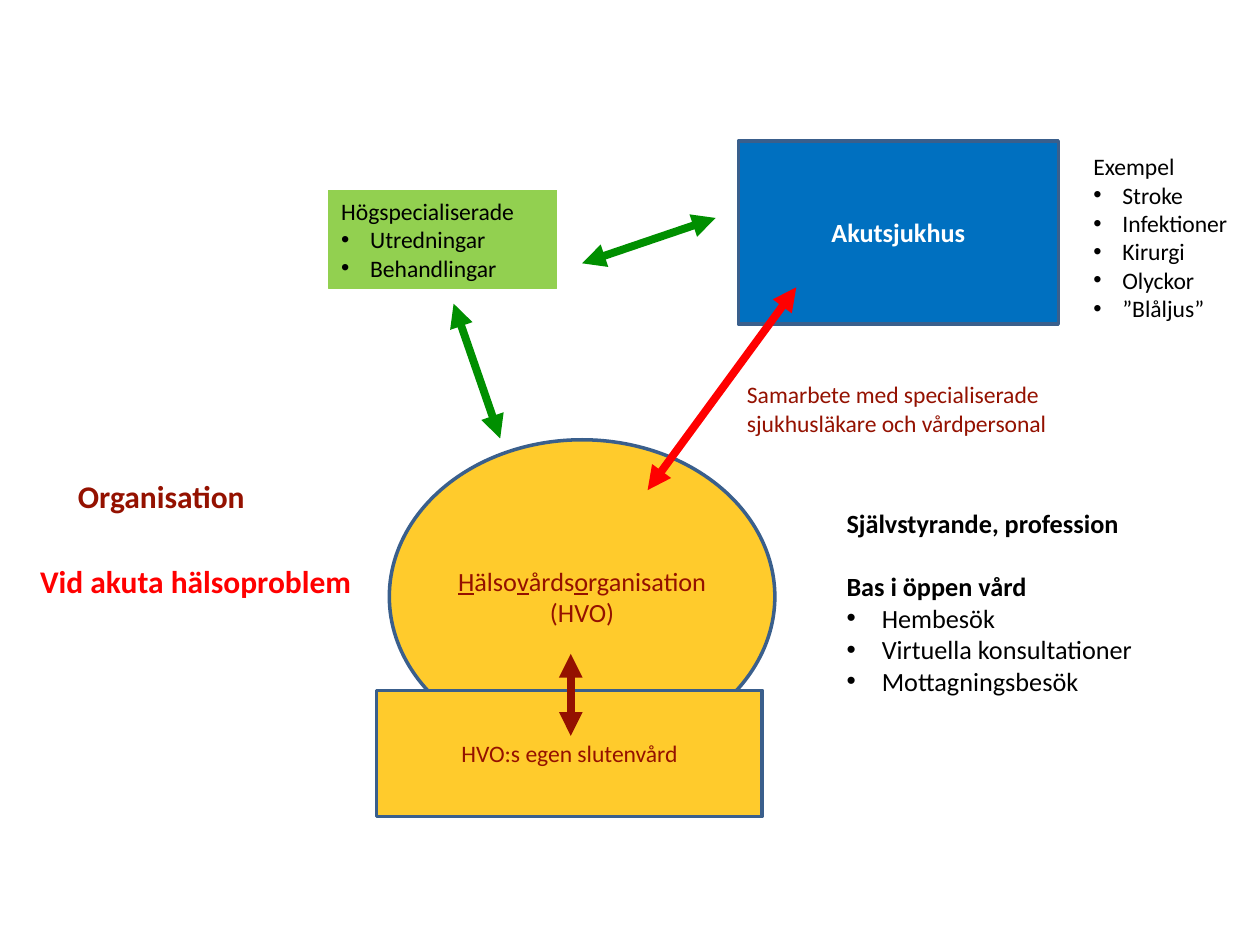
"""Build the slide on how a health organisation works with hospitals in acute care."""
import pptx
import pptx.dml.color
import pptx.enum.shapes
import pptx.enum.text
import pptx.oxml
import pptx.oxml.ns
import pptx.util
from pptx.util import Inches

COLOURS = {
    "blue": "0070C0", "outline": "3A5F8C", "yellow": "FFCB2C", "lime": "92D050",
    "green": "008F00", "red": "FF0000", "maroon": "941100", "white": "FFFFFF", "black": "000000",
}
rgb = {name: pptx.dml.color.RGBColor.from_string(value) for name, value in COLOURS.items()}
RECTANGLE = pptx.enum.shapes.MSO_SHAPE.RECTANGLE
OVAL = pptx.enum.shapes.MSO_SHAPE.OVAL


def write(frame, lines, size=13.5, colour="black", bold=False, centred=False, indent=0.23, gaps=()):
    """Fill a frame: "• " starts a bullet, "_" toggles underline, gaps lists lines with space above."""
    for index, line in enumerate(lines):
        paragraph = frame.paragraphs[0] if index == 0 else frame.add_paragraph()
        is_bullet = line.startswith("• ")
        if is_bullet:
            properties = paragraph._p.get_or_add_pPr()
            properties.set("marL", str(Inches(indent)))
            properties.set("indent", str(-Inches(indent)))
            font = pptx.oxml.parse_xml(f'<a:buFont {pptx.oxml.ns.nsdecls("a")} typeface="Arial"/>')
            bullet = pptx.oxml.parse_xml(f'<a:buChar {pptx.oxml.ns.nsdecls("a")} char="•"/>')
            properties.extend([font, bullet])
        align = pptx.enum.text.PP_ALIGN
        paragraph.alignment = align.CENTER if centred else align.LEFT
        if line in gaps:
            paragraph.space_before = pptx.util.Pt(size * 1.2)
        for part, text in enumerate(line.removeprefix("• ").split("_")):
            if text:
                run = paragraph.add_run()
                run.text = text
                run.font.name = "Calibri"
                run.font.size = pptx.util.Pt(size)
                run.font.bold = bold and not is_bullet
                run.font.underline = part % 2 == 1
                run.font.color.rgb = rgb[colour]


presentation = pptx.Presentation()
presentation.slide_width, presentation.slide_height = Inches(10), Inches(7.5)
slide = presentation.slides.add_slide(presentation.slide_layouts[6])

specialised = ["Högspecialiserade", "• Utredningar", "• Behandlingar"]
organisation = ["_H_älso_v_årds_o_rganisation", "(HVO)"]
units = [
    (RECTANGLE, (5.86, 1.12, 2.54, 1.45), "blue", "outline", 2, 0.1, ["Akutsjukhus"],
     dict(size=15, colour="white", bold=True, centred=True)),
    (OVAL, (3.09, 3.49, 3.06, 2.49), "yellow", "outline", 2, 0.02, organisation,
     dict(size=15, colour="maroon", centred=True)),
    (RECTANGLE, (2.99, 5.48, 3.06, 1), "yellow", "outline", 2, 0.1, ["HVO:s egen slutenvård"],
     dict(colour="maroon", centred=True)),
    (RECTANGLE, (2.61, 1.51, 1.81, 0.78), "lime", "lime", 0.75, 0.1, specialised, {}),
]
for kind, box, fill, outline, width, margin, lines, style in units:
    shape = slide.shapes.add_shape(kind, *map(Inches, box))
    shape.shadow.inherit = False
    shape.fill.solid()
    shape.fill.fore_color.rgb = rgb[fill]
    shape.line.color.rgb = rgb[outline]
    shape.line.width = pptx.util.Pt(width)
    frame = shape.text_frame
    frame.word_wrap = True
    frame.margin_left = frame.margin_right = Inches(margin)
    frame.vertical_anchor = pptx.enum.text.MSO_ANCHOR.MIDDLE
    write(frame, lines, **style)

arrows = [
    ((5.14, 3.89, 6.32, 2.28), "red"),
    ((4.53, 5.84, 4.53, 5.19), "maroon"),
    ((4.62, 2.09, 5.68, 1.73), "green"),
    ((3.6, 2.41, 3.97, 3.48), "green"),
]
for ends, colour in arrows:
    arrow = slide.shapes.add_connector(pptx.enum.shapes.MSO_CONNECTOR.STRAIGHT, *map(Inches, ends))
    arrow.line.color.rgb = rgb[colour]
    arrow.line.width = pptx.util.Pt(4.5)
    for tag in ("headEnd", "tailEnd"):
        head = pptx.oxml.parse_xml(f'<a:{tag} {pptx.oxml.ns.nsdecls("a")} type="triangle"/>')
        arrow.line._get_or_add_ln().append(head)
    effects = pptx.oxml.parse_xml(f'<a:effectLst {pptx.oxml.ns.nsdecls("a")}/>')
    arrow._element.spPr.append(effects)

cooperation = ["Samarbete med specialiserade", "sjukhusläkare och vårdpersonal"]
base_care = ["Självstyrande, profession", "Bas i öppen vård",
             "• Hembesök", "• Virtuella konsultationer", "• Mottagningsbesök"]
examples = ["Exempel", "• Stroke", "• Infektioner", "• Kirurgi", "• Olyckor", "• ”Blåljus”"]
labels = [
    ((0.52, 3.74, 4.88, 0.66), True, ["Organisation"], dict(size=18, colour="maroon", bold=True)),
    ((5.83, 2.97, 2.62, 0.56), False, cooperation, dict(colour="maroon")),
    ((0.22, 4.41, 2.69, 0.4), False, ["Vid akuta hälsoproblem"],
     dict(size=18, colour="red", bold=True)),
    ((6.62, 3.98, 2.49, 1.62), False, base_care,
     dict(size=15, bold=True, indent=0.28, gaps=["Bas i öppen vård"])),
    ((8.58, 1.16, 1.44, 1.46), True, examples, {}),
]
for box, wraps, lines, style in labels:
    label = slide.shapes.add_textbox(*map(Inches, box))
    label.text_frame.word_wrap = wraps
    write(label.text_frame, lines, **style)

presentation.save("out.pptx")
